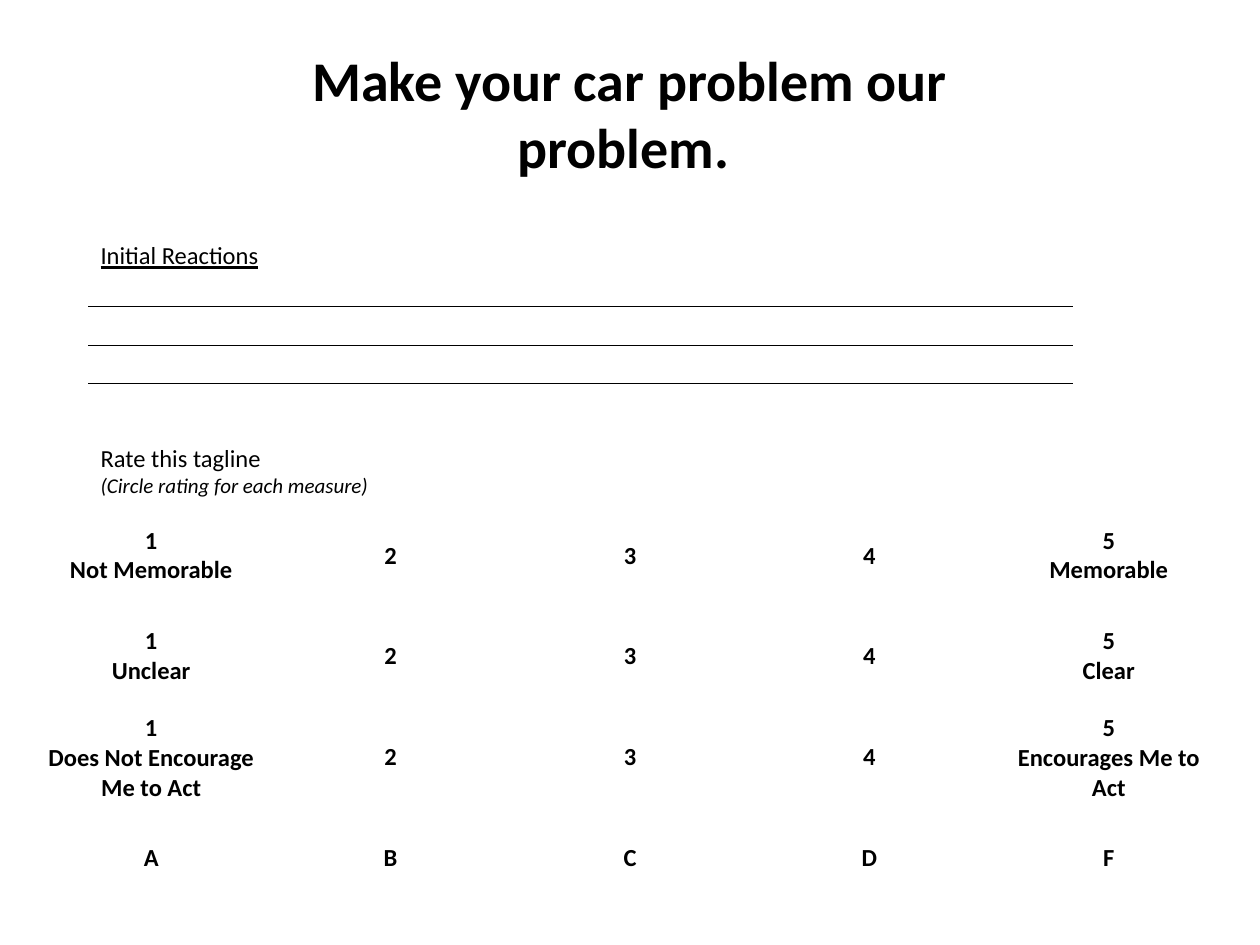
from lxml.etree import SubElement
from pptx import Presentation
from pptx.dml.color import RGBColor
from pptx.enum.shapes import MSO_CONNECTOR
from pptx.enum.text import MSO_ANCHOR, MSO_AUTO_SIZE, PP_ALIGN
from pptx.oxml.ns import qn
from pptx.util import Inches, Pt

COLORS = {"ink": "000000", "paper": "FFFFFF"}
FONT = "Calibri"
TITLE = {"size": Pt(32), "bold": True}
HEADING = {"size": Pt(14)}
UNDERLINED = {"size": Pt(14), "underline": True}
HINT = {"size": Pt(12), "italic": True}
RATING = {"size": Pt(14), "bold": True}

SCALES = [
    ("Not Memorable", "Memorable"),
    ("Unclear", "Clear"),
    ("Does Not Encourage Me to Act", "Encourages Me to Act"),
]
GRADES = ["A", "B", "C", "D", "F"]
WRITING_LINES = [2.43, 2.74, 3.04]


def color(name):
    return RGBColor.from_string(COLORS[name])


def write_paragraphs(text_frame, lines, alignment):
    """Fill a text frame from (text, format) pairs, one paragraph each."""
    for index, (text, font_format) in enumerate(lines):
        paragraph = text_frame.paragraphs[0] if index == 0 else text_frame.add_paragraph()
        paragraph.alignment = alignment
        run = paragraph.add_run()
        run.text = text
        run.font.name = FONT
        run.font.color.rgb = color("ink")
        for name, value in font_format.items():
            setattr(run.font, name, value)


def add_text(slide, box, lines, alignment=PP_ALIGN.LEFT, wrap=False):
    text_frame = slide.shapes.add_textbox(*map(Inches, box)).text_frame
    text_frame.word_wrap = wrap
    text_frame.auto_size = MSO_AUTO_SIZE.SHAPE_TO_FIT_TEXT
    write_paragraphs(text_frame, lines, alignment)


def add_writing_line(slide, top):
    line = slide.shapes.add_connector(
        MSO_CONNECTOR.STRAIGHT, Inches(0.7), Inches(top), Inches(8.52), Inches(top))
    line.line.color.rgb = color("ink")
    line.line.width = Pt(0.5)
    SubElement(line._element.spPr, qn("a:effectLst"))


def add_rating_table(slide, box, rows):
    """Add a plain table; each cell is a list of text lines."""
    table = slide.shapes.add_table(len(rows), len(rows[0]), *map(Inches, box)).table
    table.first_row = False
    table.horz_banding = False
    for row, contents in zip(table.rows, rows):
        for cell, texts in zip(row.cells, contents):
            cell.fill.solid()
            cell.fill.fore_color.rgb = color("paper")
            cell.vertical_anchor = MSO_ANCHOR.MIDDLE
            lines = [(text, RATING) for text in texts]
            write_paragraphs(cell.text_frame, lines, PP_ALIGN.CENTER)


def main():
    presentation = Presentation()
    presentation.slide_width = Inches(10)
    presentation.slide_height = Inches(7.5)
    slide = presentation.slides.add_slide(presentation.slide_layouts[6])

    add_text(slide, (2.27, 0.31, 5.46, 1.18),
             [("Make your car problem our problem. ", TITLE)], PP_ALIGN.CENTER, wrap=True)
    add_text(slide, (0.7, 1.86, 1.47, 0.34), [("Initial Reactions", UNDERLINED)])
    add_text(slide, (0.7, 3.47, 2.35, 0.54),
             [("Rate this tagline", HEADING), ("(Circle rating for each measure)", HINT)])

    rows = [[["1", low], ["2"], ["3"], ["4"], ["5", high]] for low, high in SCALES]
    rows.append([[grade] for grade in GRADES])
    add_rating_table(slide, (0.25, 4.01, 9.5, 3.2), rows)

    for top in WRITING_LINES:
        add_writing_line(slide, top)

    presentation.save("out.pptx")


if __name__ == "__main__":
    main()
